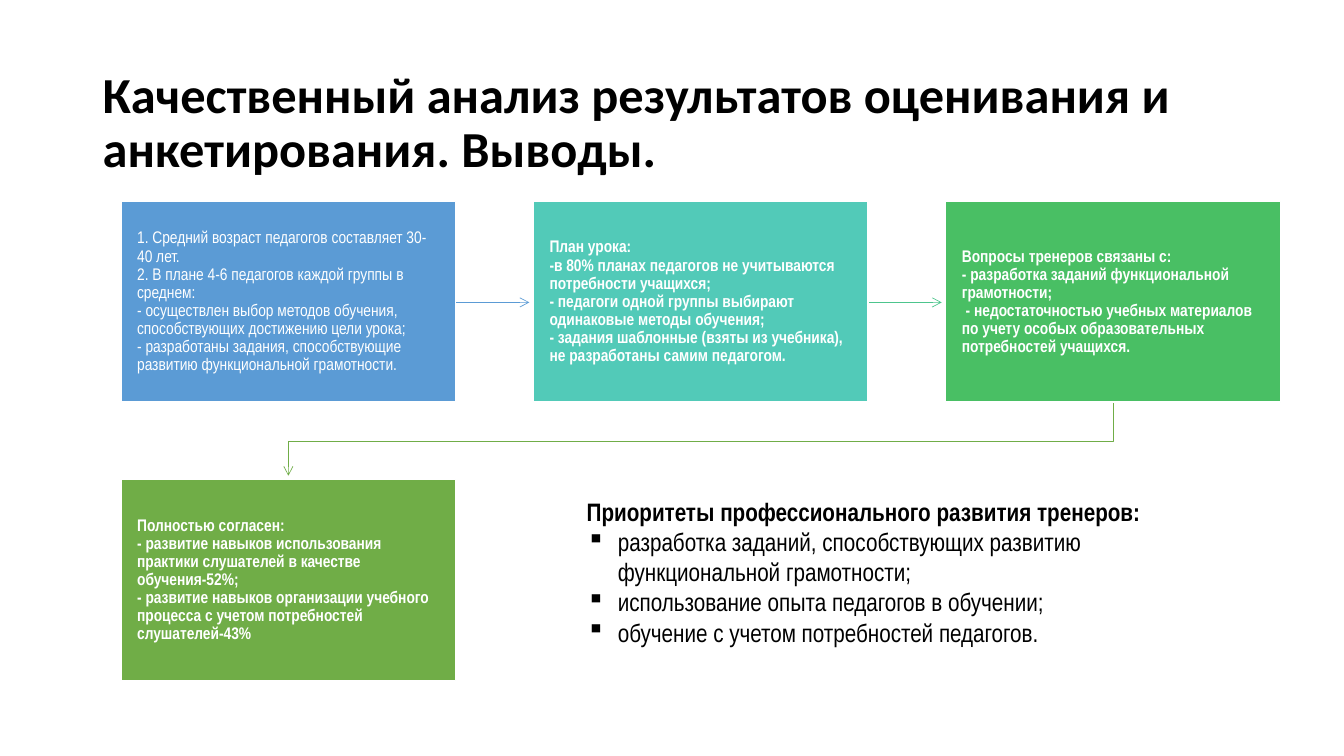
from lxml.etree import SubElement
from pptx import Presentation
from pptx.dml.color import RGBColor
from pptx.enum.shapes import MSO_CONNECTOR, MSO_SHAPE
from pptx.enum.text import MSO_ANCHOR, PP_ALIGN
from pptx.oxml.ns import qn
from pptx.util import Inches, Pt

COLORS = {
    "black": "000000", "white": "FFFFFF", "blue": "5B9BD5", "teal": "52CAB8",
    "mint": "4DC58D", "green": "49BF64", "olive": "70AD47",
}
TITLE = "Качественный анализ результатов оценивания и анкетирования. Выводы."
CARDS = [
    ("blue", False, [
        "1. Средний возраст педагогов составляет 30-40 лет.",
        "2. В плане 4-6 педагогов каждой группы в среднем:",
        "- осуществлен выбор методов обучения, способствующих достижению цели урока;",
        "- разработаны задания, способствующие развитию функциональной грамотности.",
    ]),
    ("teal", True, [
        "План урока:",
        "-в 80% планах педагогов не учитываются потребности учащихся;",
        "- педагоги одной группы выбирают одинаковые методы обучения;",
        "- задания шаблонные (взяты из учебника), не разработаны самим педагогом.",
    ]),
    ("green", True, [
        "Вопросы тренеров связаны с:",
        "- разработка заданий функциональной грамотности;",
        " - недостаточностью учебных материалов по учету особых образовательных потребностей учащихся.",
    ]),
    ("olive", True, [
        "Полностью согласен:",
        "- развитие навыков использования практики слушателей в качестве обучения-52%;",
        "- развитие навыков организации учебного процесса с учетом потребностей слушателей-43%",
    ]),
]
ARROW_COLORS = ["blue", "mint"]
PRIORITIES_HEAD = "Приоритеты профессионального развития тренеров:"
PRIORITIES = [
    "разработка заданий, способствующих развитию функциональной грамотности;",
    "использование опыта педагогов в обучении;",
    "обучение с учетом потребностей педагогов.",
]
COLUMNS = 3
LEFT, TOP = 1.2, 2
CARD_WIDTH, CARD_HEIGHT = 3.32, 1.99
STEP_X, STEP_Y = 4.09, 2.76
ARROW_GAP = 0.04


def color(name):
    return RGBColor.from_string(COLORS[name])


def write(para, text, size=12, font="Arial Narrow", tint="black", bold=False,
          spacing=1.0, bullet=None):
    para.alignment = PP_ALIGN.LEFT
    para.line_spacing = spacing
    for index, line in enumerate(text.split("\n")):
        if index:
            para.add_line_break()
        span = para.add_run()
        span.text = line
        span.font.size = Pt(size)
        span.font.name = font
        span.font.bold = bold
        span.font.color.rgb = color(tint)
    if bullet:
        properties = para._p.get_or_add_pPr()
        properties.set("marL", str(Inches(0.31)))
        properties.set("indent", str(Inches(-0.31)))
        SubElement(properties, qn("a:buChar"), char=bullet)


def add_text_box(page, left, top, width, height, anchor):
    box = page.shapes.add_textbox(Inches(left), Inches(top), Inches(width), Inches(height))
    box.text_frame.word_wrap = True
    box.text_frame.vertical_anchor = anchor
    return box.text_frame


def add_card(page, left, top, fill, bold, lines):
    card = page.shapes.add_shape(MSO_SHAPE.RECTANGLE, Inches(left), Inches(top),
                                 Inches(CARD_WIDTH), Inches(CARD_HEIGHT))
    card.shadow.inherit = False
    card.fill.solid()
    card.fill.fore_color.rgb = color(fill)
    card.line.color.rgb = color("white")
    card.line.width = Pt(1)
    frame = card.text_frame
    frame.word_wrap = True
    frame.vertical_anchor = MSO_ANCHOR.MIDDLE
    frame.margin_left = frame.margin_right = Inches(0.16)
    frame.margin_top = frame.margin_bottom = Inches(0.17)
    write(frame.paragraphs[0], "\n".join(lines), tint="white", bold=bold, spacing=0.9)


def style_arrow(arrow, tint):
    arrow.line.color.rgb = color(tint)
    arrow.line.width = Pt(0.5)
    SubElement(arrow.line._get_or_add_ln(), qn("a:tailEnd"), type="arrow")
    SubElement(arrow._element.spPr, qn("a:effectLst"))


def add_flow(page):
    for index, tint in enumerate(ARROW_COLORS):
        start = LEFT + index * STEP_X + CARD_WIDTH
        end = LEFT + (index + 1) * STEP_X - ARROW_GAP
        arrow = page.shapes.add_connector(MSO_CONNECTOR.STRAIGHT, Inches(start), Inches(3),
                                          Inches(end), Inches(3))
        style_arrow(arrow, tint)
    first_center = LEFT + CARD_WIDTH / 2
    last_center = first_center + (COLUMNS - 1) * STEP_X
    bottom = TOP + CARD_HEIGHT
    next_row = TOP + STEP_Y
    middle = (bottom + next_row) / 2
    outline = page.shapes.build_freeform(Inches(last_center), Inches(bottom))
    corners = [(last_center, middle), (first_center, middle),
               (first_center, next_row - ARROW_GAP)]
    outline.add_line_segments([(Inches(x), Inches(y)) for x, y in corners], close=False)
    elbow = outline.convert_to_shape()
    elbow.fill.background()
    style_arrow(elbow, "olive")


def main():
    deck = Presentation()
    deck.slide_width, deck.slide_height = Inches(13.33), Inches(7.5)
    page = deck.slides.add_slide(deck.slide_layouts[6])

    title = add_text_box(page, 0.92, 0.61, 11.5, 1.24, MSO_ANCHOR.MIDDLE)
    write(title.paragraphs[0], TITLE, size=36, font="Calibri", bold=True, spacing=0.9)

    add_flow(page)
    for index, card in enumerate(CARDS):
        row, column = divmod(index, COLUMNS)
        add_card(page, LEFT + column * STEP_X, TOP + row * STEP_Y, *card)

    priorities = add_text_box(page, 5.72, 4.87, 6.2, 1.62, MSO_ANCHOR.TOP)
    write(priorities.paragraphs[0], PRIORITIES_HEAD, size=18, bold=True)
    for item in PRIORITIES:
        write(priorities.add_paragraph(), item, size=18, bullet="▪")

    deck.save("out.pptx")


if __name__ == "__main__":
    main()
